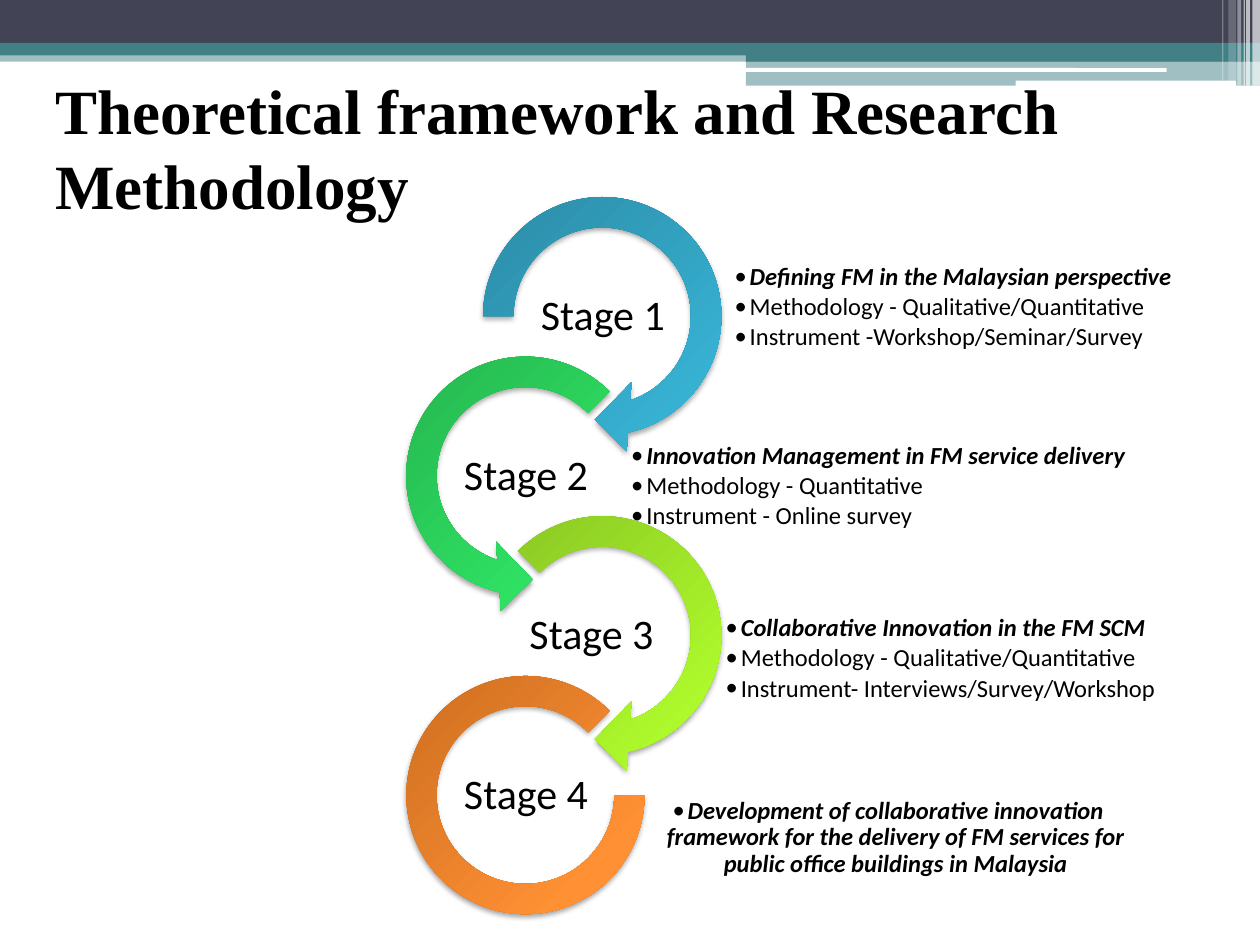
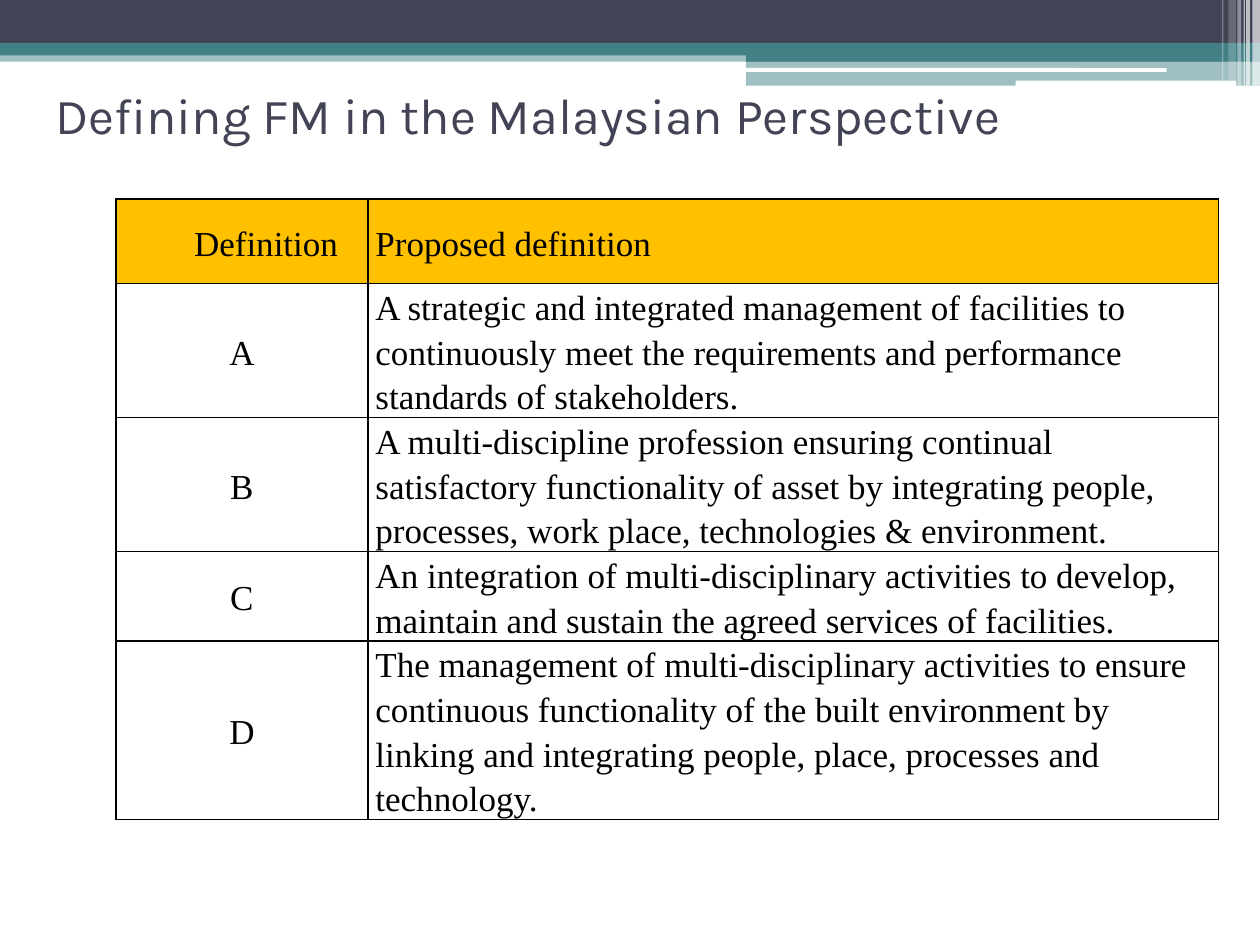
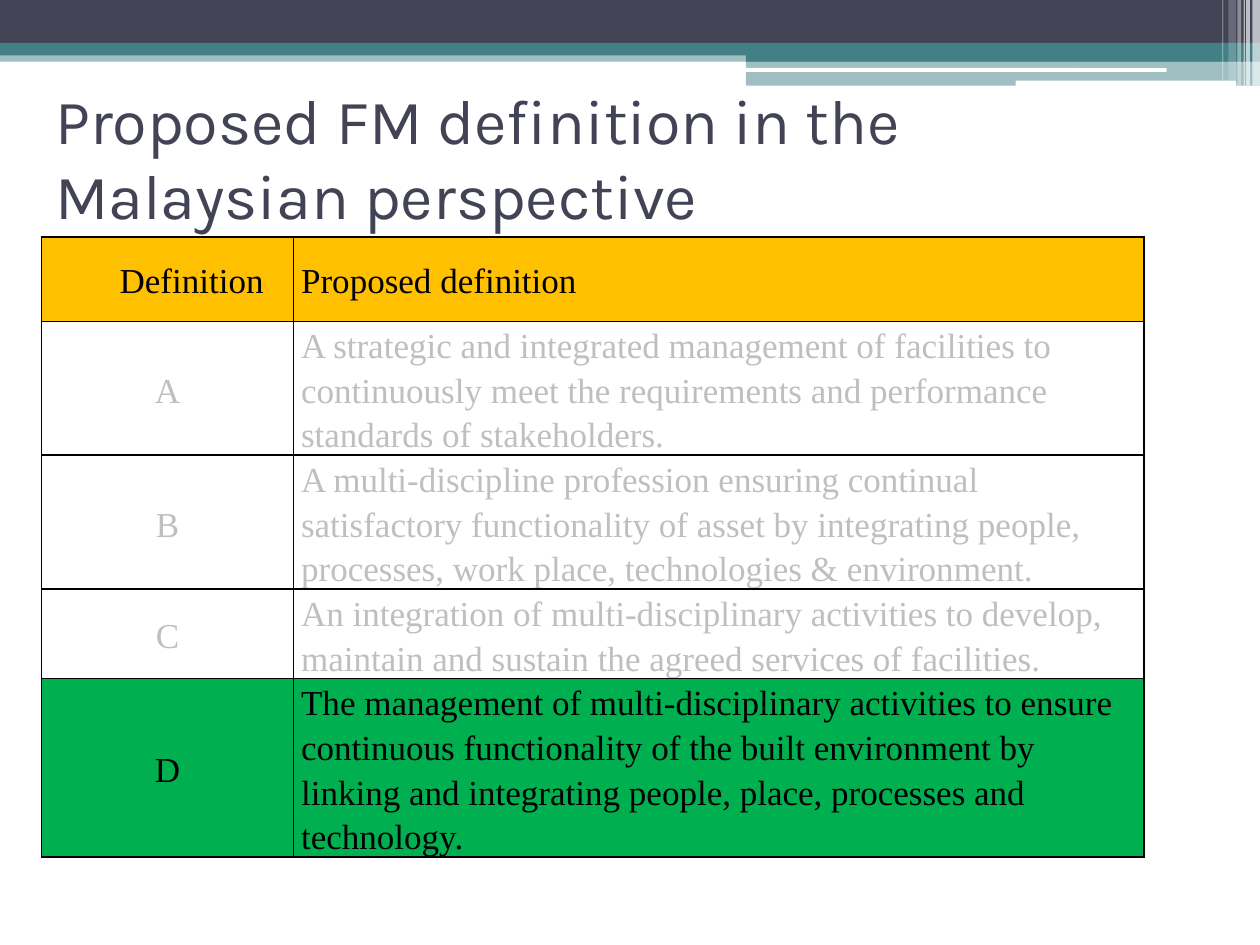
from lxml import etree
from pptx import Presentation
from pptx import util as u
from pptx.dml.color import RGBColor
from pptx.enum import shapes, text
from pptx.oxml.ns import qn

INK, NAVY, TEAL, WHITE = "000000", "424456", "438086", "FFFFFF"
AMBER, GREEN, FADED = "FFC000", "00B050", "BFBFBF"
SERIF, SANS, HEADING = "Times New Roman", "Calibri", "Karla"
RECT, ROUND = shapes.MSO_SHAPE.RECTANGLE, shapes.MSO_SHAPE.ROUNDED_RECTANGLE
CENTER = text.PP_ALIGN.CENTER

# left, top, width, height, colour, opacity in percent, preset
BANDS = [
    (0, 0.4, 10, 0.09, TEAL, 50, RECT),
    (0, 0, 10, 0.34, NAVY, 100, RECT),
    (0, 0.34, 10, 0.1, TEAL, 100, RECT),
    (5.92, 0.39, 4.08, 0.1, TEAL, 100, RECT),
    (5.92, 0.48, 4.08, 0.2, TEAL, 50, RECT),
    (5.91, 0.54, 3.35, 0.03, WHITE, 100, ROUND),
    (8.06, 0.64, 1.75, 0.05, WHITE, 100, ROUND),
    (9.94, 0, 0.06, 0.68, WHITE, 65, RECT),
    (9.89, 0, 0.03, 0.68, WHITE, 65, RECT),
    (9.87, 0, 0.01, 0.68, WHITE, 60, RECT),
    (9.82, 0, 0.03, 0.68, WHITE, 40, RECT),
    (9.75, 0, 0.06, 0.64, WHITE, 20, RECT),
    (9.7, 0, 0.01, 0.64, WHITE, 30, RECT),
]

RIGHT_ARROW = shapes.MSO_SHAPE.CIRCULAR_ARROW
LEFT_ARROW = shapes.MSO_SHAPE.LEFT_CIRCULAR_ARROW
ARC = shapes.MSO_SHAPE.BLOCK_ARC
RING_SIZE, ARC_SIZE = 2.2, 1.89
FIRST_RING_TOP, RING_STEP = 1.41, 3.8 / 3

# preset, ring left, size, adjustments, gradient, notes box, notes
STAGES = [
    (RIGHT_ARROW, 3.68, RING_SIZE, (0.11, 11.42, 45, 108, 0.125),
     ("2A88A2", "37B1D2", "34B4D6"), (5.82, 2, 3.59, 0.88),
     ("Defining FM in the Malaysian perspective",
      "Methodology - Qualitative/Quantitative",
      "Instrument -Workshop/Seminar/Survey")),
    (LEFT_ARROW, 3.07, RING_SIZE, (0.11, 11.42, 63, 189, 0.125),
     ("25B24E", "30E765", "2DEB64"), (5, 3.42, 4.42, 0.88),
     ("Innovation Management in FM service delivery",
      "Methodology - Quantitative",
      "Instrument - Online survey")),
    (RIGHT_ARROW, 3.68, RING_SIZE, (0.11, 11.42, 45, 135, 0.125),
     ("85C022", "ADF92C", "AFFE28"), (5.75, 4.79, 3.67, 0.88),
     ("Collaborative Innovation in the FM SCM",
      "Methodology - Qualitative/Quantitative",
      "Instrument- Interviews/Survey/Workshop")),
    (ARC, 3.07, ARC_SIZE, (0, 189, 0.127),
     ("CC6E20", "FF9034", "FF9136"), (5.11, 6.21, 3.88, 0.88),
     ("Development of collaborative innovation framework for the delivery "
      "of FM services for public office buildings in Malaysia",)),
]

DEFINITIONS = [
    ("Definition", "Proposed definition"),
    ("A", "A strategic and integrated management of facilities to continuously "
          "meet the requirements and performance standards of stakeholders."),
    ("B", "A multi-discipline profession ensuring continual satisfactory "
          "functionality of asset by integrating people, processes, work place, "
          "technologies & environment."),
    ("C", "An integration of multi-disciplinary activities to develop, maintain "
          "and sustain the agreed services of facilities."),
    ("D", "The management of multi-disciplinary activities to ensure continuous "
          "functionality of the built environment by linking and integrating "
          "people, place, processes and technology."),
]
COLUMN_WIDTHS = (2, 6.75)
ROW_HEIGHTS = (0.67, 1, 1, 0.67, 1)


def rgb(value):
    return RGBColor.from_string(value)


def inches(*values):
    return [u.Inches(value) for value in values]


def add_xml(parent, tag, **attributes):
    child = etree.SubElement(parent, qn(tag))
    for name, value in attributes.items():
        child.set(name, str(value))
    return child


def add_colour(parent, colour, opacity=100):
    node = add_xml(parent, "a:srgbClr", val=colour)
    if opacity < 100:
        add_xml(node, "a:alpha", val=opacity * 1000)


def set_font(para, size, name, colour=INK, strong=False, slanted=False):
    font = para.font
    font.size, font.name = u.Pt(size), name
    font.bold, font.italic = strong, slanted
    font.color.rgb = rgb(colour)


def set_indent(para, margin, first):
    properties = para._p.get_or_add_pPr()
    properties.set("marL", str(u.Inches(margin)))
    properties.set("indent", str(u.Inches(first)))
    return properties


class Deck:
    def __init__(self):
        self.deck = Presentation()
        self.deck.slide_width, self.deck.slide_height = inches(10, 7.5)
        self.page = None

    def new_page(self):
        self.page = self.deck.slides.add_slide(self.deck.slide_layouts[6])
        for *place, colour, opacity, preset in BANDS:
            band = self.shape(preset, place)
            band.fill.solid()
            band.fill.fore_color.rgb = rgb(colour)
            if opacity < 100:
                node = band._element.spPr.find(".//" + qn("a:srgbClr"))
                add_xml(node, "a:alpha", val=opacity * 1000)

    def shape(self, preset, place):
        shape = self.page.shapes.add_shape(preset, *inches(*place))
        shape.shadow.inherit = False
        shape.line.fill.background()
        return shape

    def box(self, place, insets=(0.1, 0.05, 0.1, 0.05)):
        """Add an empty, wrapping, vertically centred text box."""
        frame = self.page.shapes.add_textbox(*inches(*place)).text_frame
        frame.word_wrap = True
        frame.vertical_anchor = text.MSO_ANCHOR.MIDDLE
        (frame.margin_left, frame.margin_top,
         frame.margin_right, frame.margin_bottom) = inches(*insets)
        return frame

    def title(self, wording, place, size=36, name=HEADING, colour=NAVY, strong=False):
        para = self.box(place).paragraphs[0]
        para.text = wording
        set_font(para, size, name, colour, strong)

    def ring(self, preset, place, adjustments, colours):
        """Add a circular shape with a diagonal gradient and a soft shadow."""
        ring = self.shape(preset, place)
        for index, value in enumerate(adjustments):
            ring.adjustments[index] = value
        ring.fill.gradient()
        ring.fill.gradient_angle = 315
        properties = ring._element.spPr
        stops = properties.find(".//" + qn("a:gsLst"))
        stops.clear()
        for position, colour in zip((0, 80, 100), colours):
            add_colour(add_xml(stops, "a:gs", pos=position * 1000), colour)
        shadow = add_xml(properties.find(qn("a:effectLst")), "a:outerShdw",
                         blurRad=u.Pt(3.1), dist=u.Pt(1.8), dir=5400000,
                         rotWithShape=0)
        add_colour(shadow, INK, 35)

    def label(self, wording, place, right_inset=0.02):
        para = self.box(place, (0.02, 0.02, right_inset, 0.02)).paragraphs[0]
        para.text = wording
        para.alignment = CENTER
        para.line_spacing = 0.9
        set_font(para, 24, SANS)

    def notes(self, lines, place):
        """Add bullets, the first one emphasised; a lone bullet is centred."""
        frame = self.box(place, (0.01,) * 4)
        for index, line in enumerate(lines):
            para = frame.add_paragraph() if index else frame.paragraphs[0]
            para.text = line
            properties = set_indent(para, 0.12, -0.12)
            add_xml(properties, "a:buFont", typeface=SANS)
            add_xml(properties, "a:buChar", char="•")
            if len(lines) == 1:
                para.alignment = CENTER
            para.line_spacing = 0.9
            para.space_after = u.Pt(2.1)
            set_font(para, 14, SANS, strong=index == 0, slanted=index == 0)

    def cell(self, cell, wording, fill, colour):
        cell.margin_left = cell.margin_right = u.Inches(0.06)
        cell.margin_top = cell.margin_bottom = 0
        cell.vertical_anchor = text.MSO_ANCHOR.MIDDLE
        properties = cell._tc.get_or_add_tcPr()
        for side in "LRTB":
            border = add_xml(properties, "a:ln" + side, w=u.Pt(1))
            add_colour(add_xml(border, "a:solidFill"), INK)
        cell.fill.solid()
        cell.fill.fore_color.rgb = rgb(fill)
        para = cell.text_frame.paragraphs[0]
        para.text = wording
        para.line_spacing = u.Pt(25.5)
        set_font(para, 20, SERIF, colour)
        return para

    def definitions(self, left, top, chosen=None):
        """Add the table; a chosen letter is highlighted and the others fade."""
        table = self.page.shapes.add_table(
            len(ROW_HEIGHTS), len(COLUMN_WIDTHS),
            *inches(left, top, sum(COLUMN_WIDTHS), sum(ROW_HEIGHTS))).table
        table.first_row = table.horz_banding = False
        for column, width in zip(table.columns, COLUMN_WIDTHS):
            column.width = u.Inches(width)
        for index, (row, height) in enumerate(zip(table.rows, ROW_HEIGHTS)):
            row.height = u.Inches(height)
            letter, definition = DEFINITIONS[index]
            fill, colour = WHITE, FADED if chosen else INK
            if index == 0:
                fill, colour = AMBER, INK
            elif letter == chosen:
                fill, colour = GREEN, INK
            key = self.cell(row.cells[0], letter, fill, colour)
            self.cell(row.cells[1], definition, fill, colour)
            if index:
                key.alignment = CENTER
            else:
                set_indent(key, 0, 0.56)


def main():
    deck = Deck()

    deck.new_page()
    deck.title("Theoretical framework and Research Methodology",
               (0.34, 0.83, 9, 0.67), name=SERIF, colour=INK, strong=True)
    for index, stage in enumerate(STAGES):
        preset, left, size, adjustments, colours, notes_place, lines = stage
        top = FIRST_RING_TOP + index * RING_STEP
        inset = (RING_SIZE - size) / 2
        deck.ring(preset, (left + inset, top + inset, size, size), adjustments, colours)
        deck.notes(lines, notes_place)
        deck.label(f"Stage {index + 1}", (left + 0.49, top + 0.8, 1.23, 0.61),
                   right_inset=0.2 if index == 2 else 0.02)

    deck.new_page()
    deck.title("Defining FM in the Malaysian Perspective", (0.34, 0.66, 9, 0.5), 28.8)
    deck.definitions(0.92, 1.58)

    deck.new_page()
    deck.title("Proposed FM definition in the Malaysian perspective",
               (0.34, 0.66, 9, 1.17))
    deck.definitions(0.33, 1.88, chosen="D")

    deck.deck.save("out.pptx")


if __name__ == "__main__":
    main()
